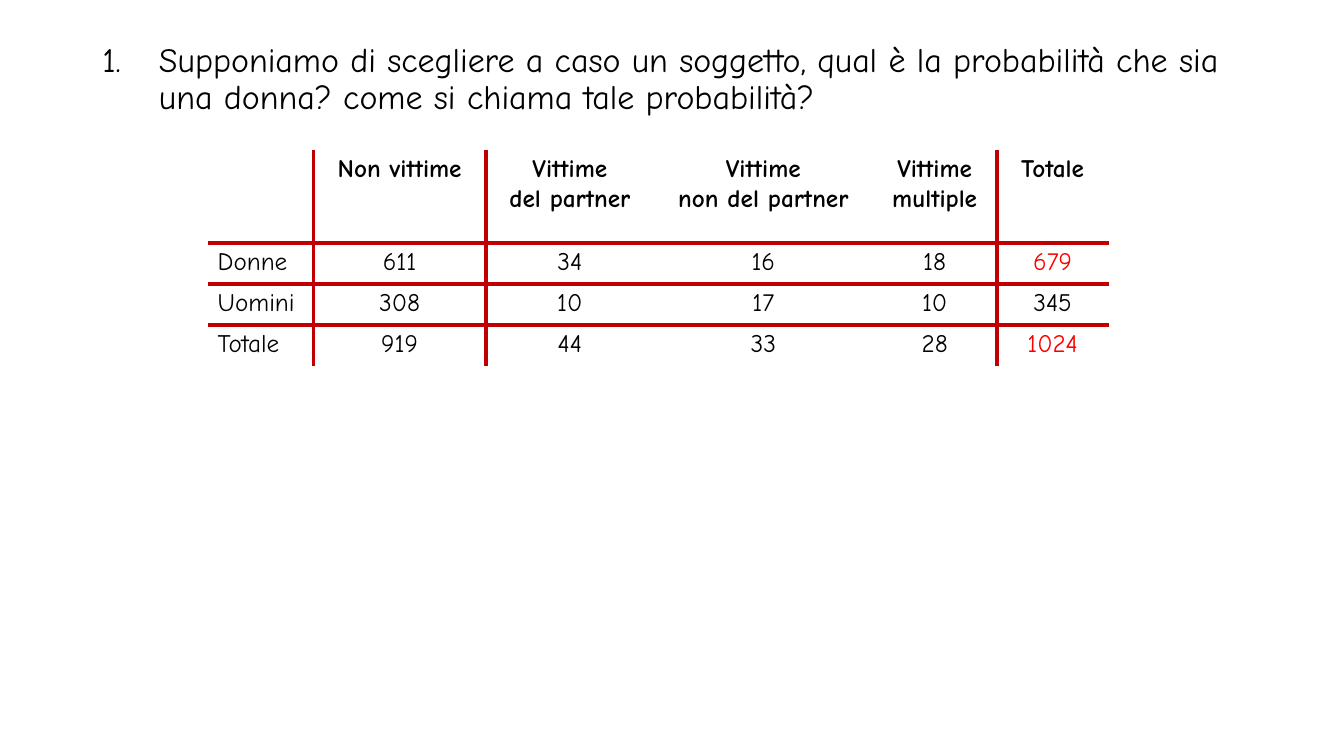
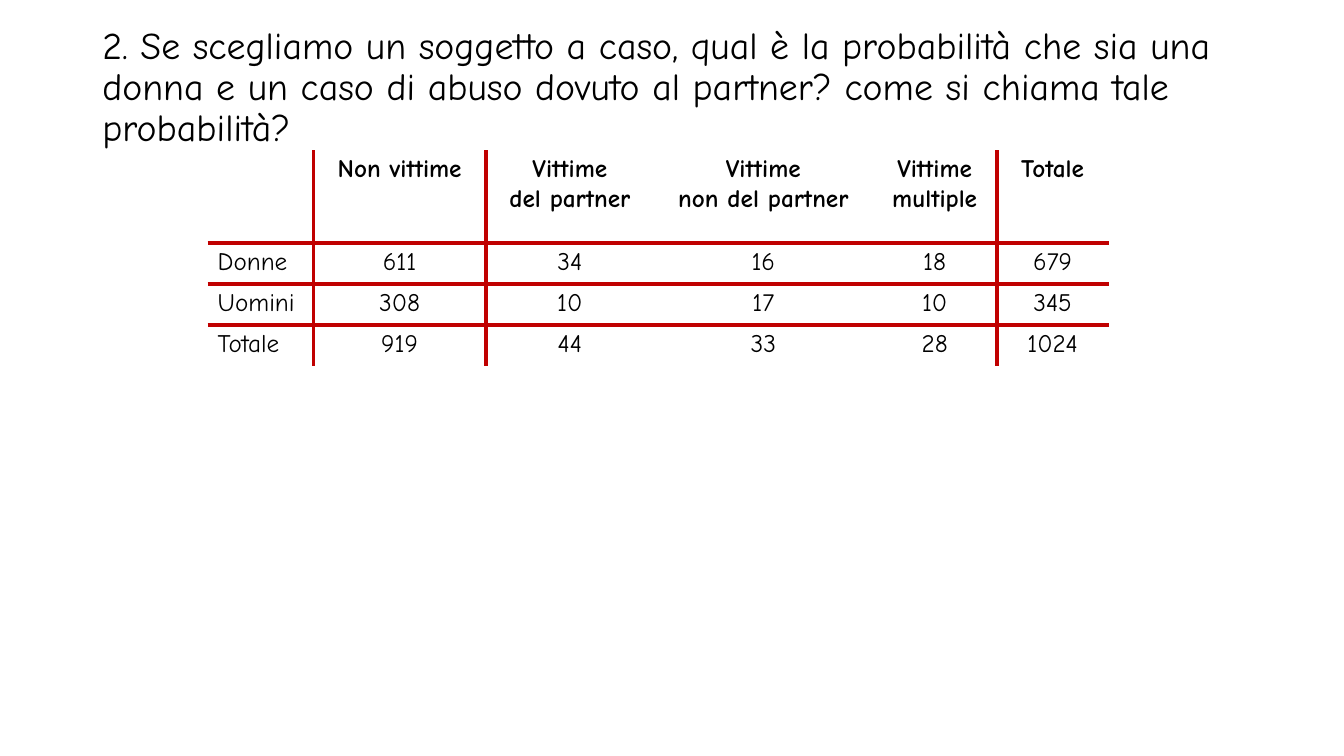
from lxml import etree
from pptx import Presentation
from pptx import util as u
from pptx.dml.color import RGBColor
from pptx.enum import text
from pptx.oxml import ns

COLORS = {"ink": "000000", "rule": "C00000", "accent": "FF0000"}
FONT = "Comic Neue"
RULE_WIDTH = u.Pt(3)
COLUMN_WIDTHS = [75.6, 123.1, 120.2, 156.2, 88.6, 79.9]
ROW_HEIGHTS = [66.2, 29.3, 29.3, 29.3]
RULED_COLUMNS = {0, 1, 4}
RULED_ROWS = {0, 1, 2}
VICTIMS = [
    ["", "Non vittime", "Vittime\ndel partner", "Vittime\nnon del partner", "Vittime\nmultiple", "Totale"],
    ["Donne", "611", "34", "16", "18", "679"],
    ["Uomini", "308", "10", "17", "10", "345"],
    ["Totale", "919", "44", "33", "28", "1024"],
]


def add_run(paragraph, wording, size, color="ink", bold=False):
    run = paragraph.add_run()
    run.text = wording
    run.font.name = FONT
    run.font.size = u.Pt(size)
    run.font.bold = bold
    run.font.color.rgb = RGBColor.from_string(COLORS[color])


def number_paragraph(paragraph, indent):
    properties = paragraph._p.get_or_add_pPr()
    properties.set("marL", str(u.Pt(indent)))
    properties.set("indent", str(u.Pt(-indent)))
    bullet_font = etree.SubElement(properties, ns.qn("a:buFont"))
    bullet_font.set("typeface", FONT)
    etree.SubElement(properties, ns.qn("a:buAutoNum")).set("type", "arabicPeriod")


def add_question(slide, wording, top, size, numbered=False):
    question = slide.shapes.add_textbox(u.Pt(66), u.Pt(top), u.Pt(828), u.Pt(104.4))
    frame = question.text_frame
    frame.word_wrap = True
    frame.vertical_anchor = text.MSO_ANCHOR.MIDDLE
    paragraph = frame.paragraphs[0]
    paragraph.line_spacing = 0.9
    if numbered:
        number_paragraph(paragraph, 40.5)
    add_run(paragraph, wording, size)


def rule_cell(cell, row, column):
    sides = {
        "lnL": column - 1 in RULED_COLUMNS,
        "lnR": column in RULED_COLUMNS,
        "lnT": row - 1 in RULED_ROWS,
        "lnB": row in RULED_ROWS,
    }
    properties = cell._tc.get_or_add_tcPr()
    for side, ruled in sides.items():
        border = etree.SubElement(properties, ns.qn(f"a:{side}"))
        if ruled:
            border.set("w", str(RULE_WIDTH))
            fill = etree.SubElement(border, ns.qn("a:solidFill"))
            etree.SubElement(fill, ns.qn("a:srgbClr")).set("val", COLORS["rule"])
        else:
            etree.SubElement(border, ns.qn("a:noFill"))


def fill_cell(cell, wording, row, column, color):
    rule_cell(cell, row, column)
    cell.fill.background()
    frame = cell.text_frame
    for index, line in enumerate(wording.split("\n") if wording else []):
        paragraph = frame.add_paragraph() if index else frame.paragraphs[0]
        if column:
            paragraph.alignment = text.PP_ALIGN.CENTER
        add_run(paragraph, line, 18, color, bold=row == 0)


def add_victims_table(slide, highlighted=()):
    table = slide.shapes.add_table(
        len(VICTIMS), len(COLUMN_WIDTHS), u.Pt(148.3), u.Pt(107.3),
        u.Pt(sum(COLUMN_WIDTHS)), u.Pt(sum(ROW_HEIGHTS))).table
    table.first_row = False
    table.horz_banding = False
    for column, width in zip(table.columns, COLUMN_WIDTHS):
        column.width = u.Pt(width)
    for row, height in zip(table.rows, ROW_HEIGHTS):
        row.height = u.Pt(height)
    for row, wordings in enumerate(VICTIMS):
        for column, wording in enumerate(wordings):
            color = "accent" if (row, column) in highlighted else "ink"
            fill_cell(table.cell(row, column), wording, row, column, color)


def main():
    deck = Presentation()
    deck.slide_width, deck.slide_height = u.Pt(960), u.Pt(540)
    blank = deck.slide_layouts[6]

    marginal = deck.slides.add_slide(blank)
    add_victims_table(marginal, highlighted={(1, 5), (3, 5)})
    add_question(
        marginal,
        "Supponiamo di scegliere a caso un soggetto, qual è la probabilità che sia una donna? "
        "come si chiama tale probabilità?",
        top=5, size=24.3, numbered=True)

    joint = deck.slides.add_slide(blank)
    add_victims_table(joint)
    add_question(
        joint,
        "2. Se scegliamo un soggetto a caso, qual è la probabilità che sia una donna e un caso "
        "di abuso dovuto al partner? come si chiama tale probabilità?",
        top=10.8, size=27)

    deck.save("out.pptx")


if __name__ == "__main__":
    main()
